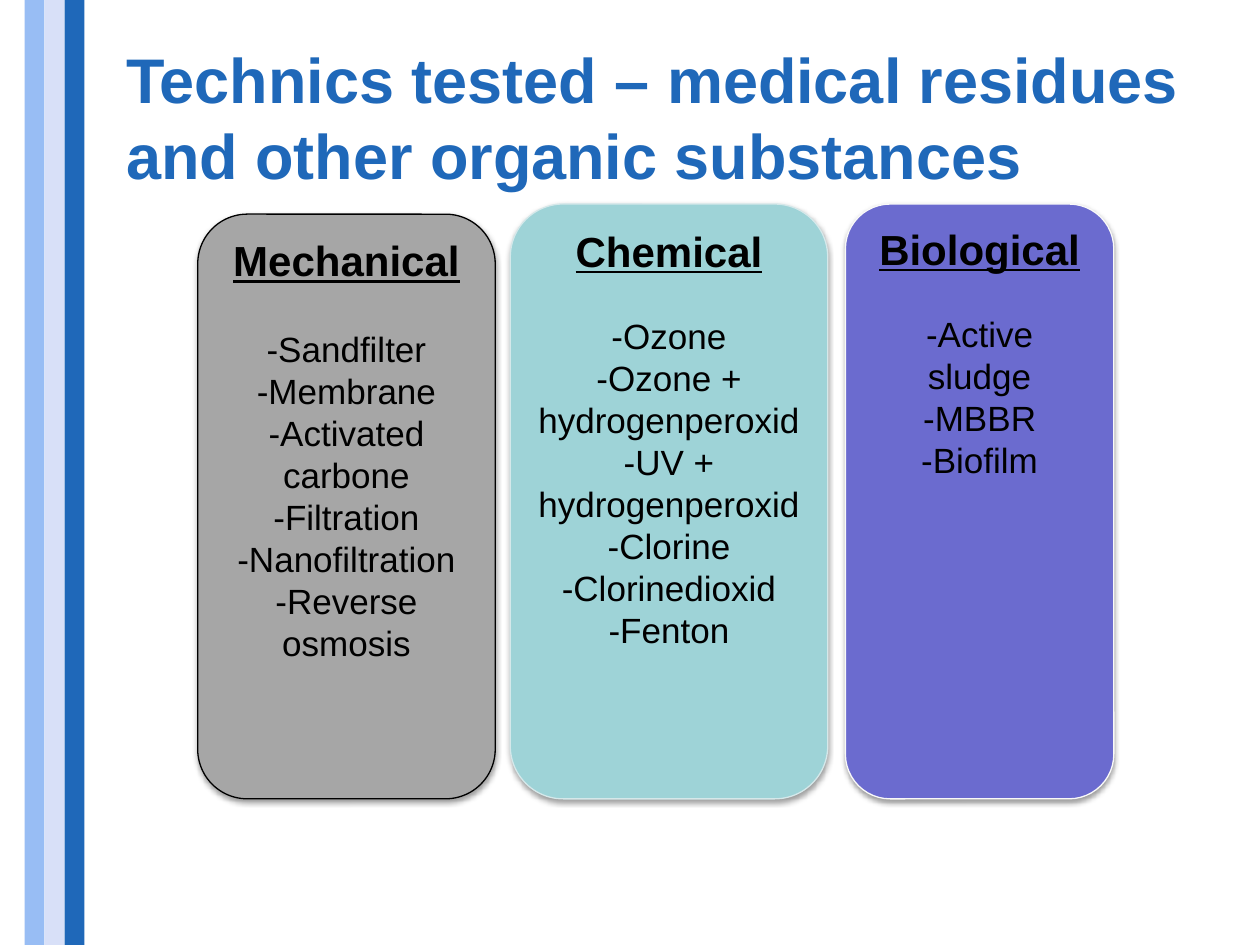
"""Builds a slide that compares mechanical, chemical and biological techniques."""
import lxml.etree
import pptx
import pptx.dml.color
import pptx.enum.shapes
import pptx.enum.text
import pptx.oxml
import pptx.oxml.ns
import pptx.util

Pt = pptx.util.Pt
COLORS = {
    "light_stripe": "98BDF4", "pale_stripe": "D8E0F8", "blue": "1F68B9",
    "black": "000000", "gray": "A6A6A6", "teal": "9ED3D7",
    "teal_line": "D5E8EA", "violet": "6B6BCF", "white_line": "F9F9F9",
}
FORMATS = {
    "title": {"size": Pt(36), "bold": True, "name": "Arial"},
    "heading": {"size": Pt(24), "bold": True, "underline": True, "name": "Arial"},
    "item": {"size": Pt(20), "bold": False, "underline": False, "name": "Arial"},
}
SHADOW = (
    '<a:effectLst %s><a:outerShdw blurRad="%d" dist="%d" dir="5400000" rotWithShape="0">'
    '<a:srgbClr val="%s"><a:alpha val="38000"/></a:srgbClr></a:outerShdw></a:effectLst>'
)
STRIPES = ["light_stripe", "pale_stripe", "blue"]
COLUMNS = [
    ("Mechanical", 113, 122.4, 170, "gray", "black", 24,
     ["Sandfilter", "Membrane", "Activated carbone", "Filtration",
      "Nanofiltration", "Reverse osmosis"]),
    ("Chemical", 291.6, 116.6, 181.4, "teal", "teal_line", 22,
     ["Ozone", "Ozone + hydrogenperoxid", "UV + hydrogenperoxid",
      "Clorine", "Clorinedioxid", "Fenton"]),
    ("Biological", 483.1, 116.6, 153.4, "violet", "white_line", 22,
     ["Active sludge", "MBBR", "Biofilm"]),
]
COLUMN_BOTTOM = 456.5


class SlideBuilder:
    """Holds the style and the current slide."""

    def __init__(self, presentation):
        """Add a slide with a title placeholder."""
        self.slide = presentation.slides.add_slide(presentation.slide_layouts[5])

    def color(self, name):
        """Return the named colour."""
        return pptx.dml.color.RGBColor.from_string(COLORS[name])

    def format(self, paragraph, style, color):
        """Apply a text style to a paragraph."""
        for attribute, value in FORMATS[style].items():
            setattr(paragraph.font, attribute, value)
        paragraph.font.color.rgb = self.color(color)

    def title(self, text, left, top, width, height):
        """Place and fill the title."""
        shape = self.slide.shapes.title
        shape.left, shape.top, shape.width, shape.height = map(Pt, (left, top, width, height))
        frame = shape.text_frame
        frame.text = text
        frame.auto_size = pptx.enum.text.MSO_AUTO_SIZE.NONE
        frame.vertical_anchor = pptx.enum.text.MSO_ANCHOR.MIDDLE
        frame.paragraphs[0].alignment = pptx.enum.text.PP_ALIGN.LEFT
        self.format(frame.paragraphs[0], "title", "blue")

    def box(self, kind, left, top, width, height, fill):
        """Add a filled shape without line or shadow."""
        shape = self.slide.shapes.add_shape(kind, Pt(left), Pt(top), Pt(width), Pt(height))
        shape.shadow.inherit = False
        shape.fill.solid()
        shape.fill.fore_color.rgb = self.color(fill)
        shape.line.fill.background()
        return shape

    def stripe(self, left, width, fill):
        """Add a vertical stripe over the full slide height."""
        self.box(pptx.enum.shapes.MSO_SHAPE.RECTANGLE, left, 0, width, 540, fill)

    def column(self, heading, left, top, width, fill, line, gap, items):
        """Add a rounded column with a heading and its items."""
        shape = self.box(pptx.enum.shapes.MSO_SHAPE.ROUNDED_RECTANGLE,
                         left, top, width, COLUMN_BOTTOM - top, fill)
        shape.line.color.rgb = self.color(line)
        shape.line.width = Pt(0.75)
        properties = shape._element.spPr
        properties.remove(properties.find(pptx.oxml.ns.qn("a:effectLst")))
        properties.append(pptx.oxml.parse_xml(SHADOW % (
            pptx.oxml.ns.nsdecls("a"), Pt(3.1), Pt(1.6), COLORS["black"])))
        frame = shape.text_frame
        frame.word_wrap = True
        frame.vertical_anchor = pptx.enum.text.MSO_ANCHOR.TOP
        frame.text = "\n".join([heading] + ["-" + item for item in items])
        for index, paragraph in enumerate(frame.paragraphs):
            paragraph.alignment = pptx.enum.text.PP_ALIGN.CENTER
            self.format(paragraph, "item" if index else "heading", "black")
        frame.paragraphs[1].space_before = Pt(gap)


def main():
    """Build and save the slide."""
    presentation = pptx.Presentation()
    presentation.slide_width, presentation.slide_height = Pt(720), Pt(540)
    builder = SlideBuilder(presentation)
    for index, fill in enumerate(STRIPES):
        builder.stripe(14.1 + index * 11.4, 11.4, fill)
    builder.title("Technics tested – medical residues and other organic substances",
                  64.8, 21.6, 619.2, 90)
    for column in COLUMNS:
        builder.column(*column)
    presentation.save("out.pptx")


if __name__ == "__main__":
    main()
